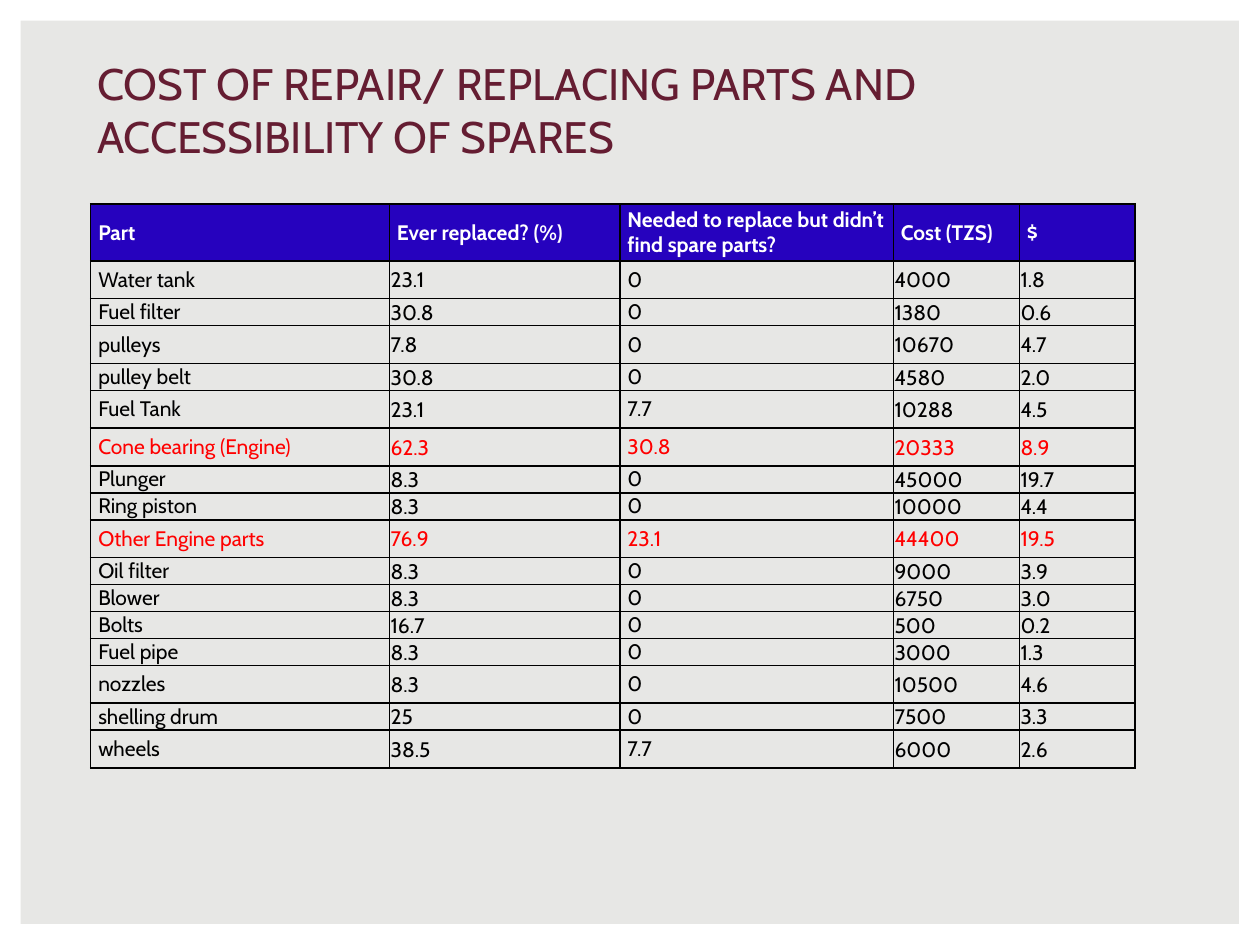
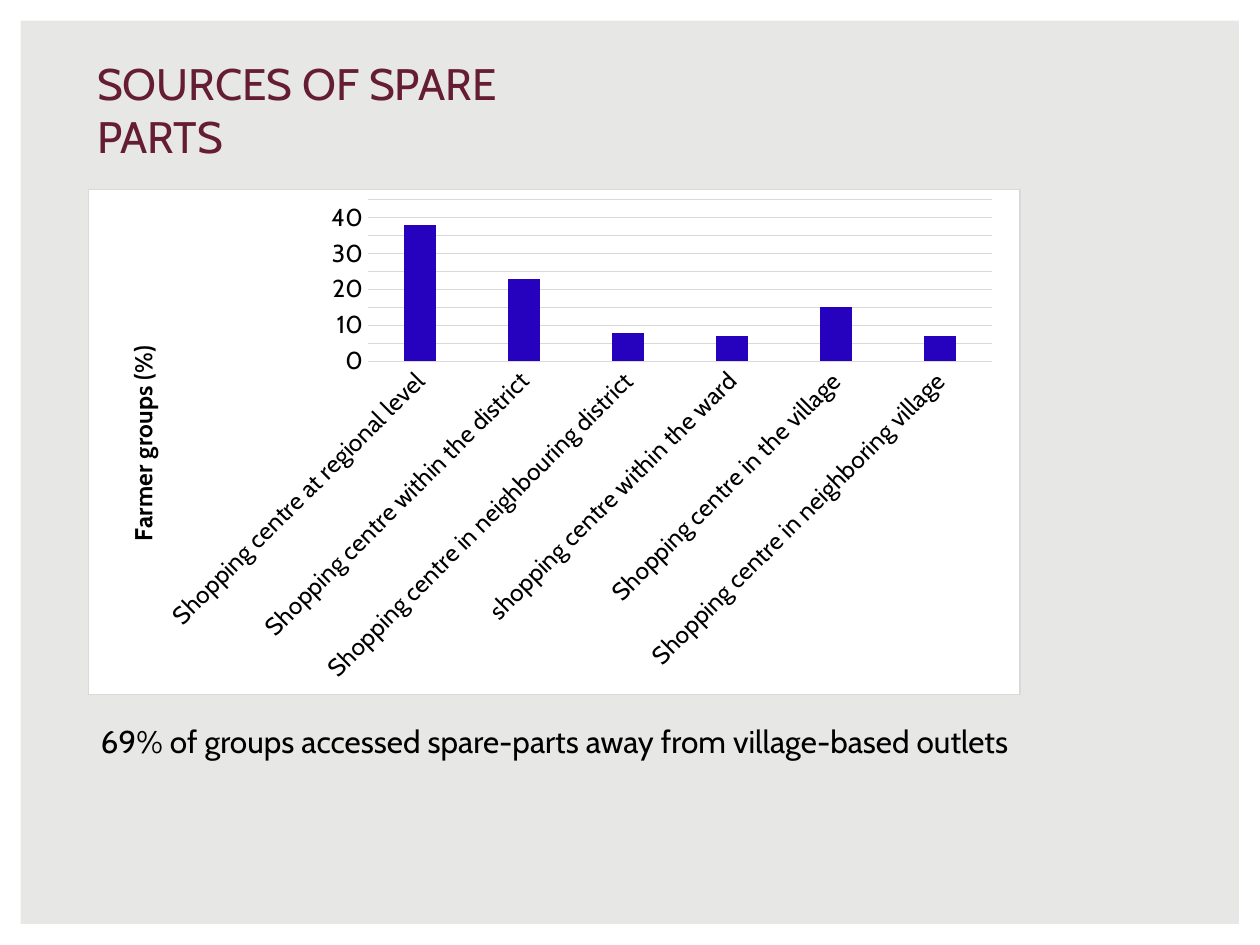
from lxml import etree
from pptx import Presentation, util as u
from pptx.chart.data import CategoryChartData
from pptx.dml.color import RGBColor
from pptx.enum import chart as ch, shapes, text
from pptx.oxml import parse_xml
from pptx.oxml.ns import nsdecls, qn

FONT = "Cabin"
GREY, WHITE, BLACK = "E7E7E5", "FFFFFF", "000000"
PLUM, BLUE, RED, RULE = "651D32", "2602BE", "FF0000", "D9D9D9"
TITLE_ONLY = 5

HEADINGS = ["Part", "Ever replaced? (%)",
            "Needed to replace but didn’t find spare parts?", "Cost (TZS)", "$"]
PARTS = [
    ("Water tank", "23.1", "0", "4000", "1.8"),
    ("Fuel filter", "30.8", "0", "1380", "0.6"),
    ("pulleys", "7.8", "0", "10670", "4.7"),
    ("pulley belt", "30.8", "0", "4580", "2.0"),
    ("Fuel Tank", "23.1", "7.7", "10288", "4.5"),
    ("Cone bearing (Engine)", "62.3", "30.8", "20333", "8.9"),
    ("Plunger", "8.3", "0", "45000", "19.7"),
    ("Ring piston", "8.3", "0", "10000", "4.4"),
    ("Other Engine parts", "76.9", "23.1", "44400", "19.5"),
    ("Oil filter", "8.3", "0", "9000", "3.9"),
    ("Blower", "8.3", "0", "6750", "3.0"),
    ("Bolts", "16.7", "0", "500", "0.2"),
    ("Fuel pipe", "8.3", "0", "3000", "1.3"),
    ("nozzles", "8.3", "0", "10500", "4.6"),
    ("shelling drum", "25", "0", "7500", "3.3"),
    ("wheels", "38.5", "7.7", "6000", "2.6"),
]
TALL_PARTS = {"Water tank", "pulleys", "Fuel Tank", "Cone bearing (Engine)",
              "Other Engine parts", "nozzles", "wheels"}
COSTLY_PARTS = {"Cone bearing (Engine)", "Other Engine parts"}
COLUMN_WIDTHS = [2.37, 1.83, 2.17, 1, 0.92]
INDENTED_COLUMNS = {0, 2}

SOURCES = {
    "Shopping centre at regional level": 38,
    "Shopping centre within the district": 23,
    "Shopping centre in neighbouring district": 8,
    "shopping centre within the ward": 7,
    "Shopping centre in the village": 15,
    "Shopping centre in neighboring village": 7,
}


def rgb(value):
    return RGBColor.from_string(value)


def style_font(font, size, color, bold=False):
    font.name, font.size, font.bold = FONT, u.Pt(size), bold
    font.color.rgb = rgb(color)


def style_text(frame, size, color, bold=False):
    for paragraph in frame.paragraphs:
        paragraph.alignment = text.PP_ALIGN.LEFT
        for run in paragraph.runs:
            style_font(run.font, size, color, bold)


def inches(*lengths):
    return [u.Inches(length) for length in lengths]


# Shared slide: white frame and title
def new_slide(prs, heading, title_width):
    slide = prs.slides.add_slide(prs.slide_layouts[TITLE_ONLY])
    frame = slide.shapes.add_shape(shapes.MSO_SHAPE.FRAME, 0, 0,
                                   prs.slide_width, prs.slide_height)
    frame.adjustments[0] = 0.022
    frame.fill.solid()
    frame.fill.fore_color.rgb = rgb(WHITE)
    frame.line.fill.background()
    frame.shadow.inherit = False
    slide.shapes.element.insert(2, frame.element)

    title = slide.shapes.title
    title.left, title.top, title.width, title.height = inches(0.67, 0.67, title_width, 0.67)
    title.text_frame.text = heading
    title.text_frame.word_wrap = True
    title.text_frame.auto_size = text.MSO_AUTO_SIZE.NONE
    title.text_frame.vertical_anchor = text.MSO_ANCHOR.BOTTOM
    style_text(title.text_frame, 25.2, PLUM)
    return slide


# Table of parts
def add_borders(cell):
    properties = cell._tc.get_or_add_tcPr()
    for side in ("lnL", "lnR", "lnT", "lnB"):
        properties.append(parse_xml(
            f'<a:{side} {nsdecls("a")} w="{u.Pt(1)}"><a:solidFill>'
            f'<a:srgbClr val="{BLACK}"/></a:solidFill></a:{side}>'))


def fill_cell(cell, content, color, indented, header=False):
    cell.text_frame.text = content
    style_text(cell.text_frame, 12, color, bold=header)
    cell.vertical_anchor = text.MSO_ANCHOR.MIDDLE
    side, top = (0.06, 0) if indented else (0.01, 0.01)
    cell.margin_left, cell.margin_top, cell.margin_right, cell.margin_bottom = inches(
        side, top, side, 0)
    add_borders(cell)
    if header:
        cell.fill.solid()
        cell.fill.fore_color.rgb = rgb(BLUE)
    else:
        cell.fill.background()


def add_parts_table(slide):
    heights = [0.45] + [0.3 if part[0] in TALL_PARTS else 0.16 for part in PARTS]
    table = slide.shapes.add_table(
        len(heights), len(HEADINGS),
        *inches(0.72, 1.62, sum(COLUMN_WIDTHS), sum(heights))).table
    table.horz_banding = False
    for column, width in zip(table.columns, COLUMN_WIDTHS):
        column.width = u.Inches(width)
    for row, height in zip(table.rows, heights):
        row.height = u.Inches(height)

    for column, heading in enumerate(HEADINGS):
        fill_cell(table.cell(0, column), heading, WHITE, indented=True, header=True)
    for row, part in enumerate(PARTS, start=1):
        color = RED if part[0] in COSTLY_PARTS else BLACK
        for column, value in enumerate(part):
            fill_cell(table.cell(row, column), value, color, column in INDENTED_COLUMNS)


# Chart of sources
def manual_layout(**settings):
    layout = etree.Element(qn("c:layout"))
    manual = etree.SubElement(layout, qn("c:manualLayout"))
    for tag, value in settings.items():
        etree.SubElement(manual, qn(f"c:{tag}")).set("val", str(value))
    return layout


def set_layout(parent, position, **settings):
    for old in parent.findall(qn("c:layout")):
        parent.remove(old)
    parent.insert(position, manual_layout(**settings))


def rule_line(line):
    line.color.rgb = rgb(RULE)
    line.width = u.Pt(0.75)


def frame_chart(chart):
    properties = parse_xml(
        f'<c:spPr {nsdecls("c", "a")}><a:solidFill><a:srgbClr val="{WHITE}"/></a:solidFill>'
        f'<a:ln w="{u.Pt(0.75)}"><a:solidFill><a:srgbClr val="{RULE}"/></a:solidFill></a:ln>'
        '</c:spPr>')
    chart.element.find(qn("c:chart")).addnext(properties)


def add_sources_chart(slide):
    data = CategoryChartData()
    data.categories = list(SOURCES)
    data.add_series("Series 1", list(SOURCES.values()))
    chart = slide.shapes.add_chart(ch.XL_CHART_TYPE.COLUMN_CLUSTERED,
                                   *inches(0.7, 1.5, 7.4, 4.02), data).chart
    chart.has_legend = chart.has_title = False
    style_font(chart.font, 14, BLACK)
    frame_chart(chart)

    columns = chart.plots[0]
    columns.gap_width, columns.overlap = 219, -27
    columns.vary_by_categories = False
    fill = columns.series[0].format.fill
    fill.solid()
    fill.fore_color.rgb = rgb(BLUE)

    sources, share = chart.category_axis, chart.value_axis
    for axis in (sources, share):
        axis.major_tick_mark = axis.minor_tick_mark = ch.XL_TICK_MARK.NONE
        style_font(axis.tick_labels.font, 14, BLACK)
    rule_line(sources.format.line)
    sources._element.txPr.bodyPr.set("rot", str(-45 * 60000))

    share.minimum_scale, share.maximum_scale, share.major_unit = 0, 45, 5
    share.format.line.fill.background()
    rule_line(share.major_gridlines.format.line)
    share_title = share.axis_title
    share_title.text_frame.text = "Farmer groups (%)"
    style_font(share_title.text_frame.paragraphs[0].runs[0].font, 14, BLACK, bold=True)
    share_title.text_frame._txBody.bodyPr.set("rot", str(-90 * 60000))

    set_layout(share_title._element, 1, xMode="edge", yMode="edge", x=0.035, y=0.3)
    set_layout(chart.element.find(".//" + qn("c:plotArea")), 0, layoutTarget="inner",
               xMode="edge", yMode="edge", x=0.3, y=0.02, w=0.67, h=0.32)


def add_finding(slide, finding):
    box = slide.shapes.add_textbox(*inches(0.7, 5.68, 7.72, 0.4)).text_frame
    box.word_wrap = True
    box.auto_size = text.MSO_AUTO_SIZE.SHAPE_TO_FIT_TEXT
    box.text = finding
    style_text(box, 18, BLACK)


def main():
    prs = Presentation()
    prs.slide_width, prs.slide_height = inches(10, 7.5)
    background = prs.slide_master.background.fill
    background.solid()
    background.fore_color.rgb = rgb(GREY)

    costs = new_slide(prs, "COST OF REPAIR/ REPLACING PARTS AND ACCESSIBILITY OF SPARES", 8.49)
    add_parts_table(costs)

    outlets = new_slide(prs, "SOURCES OF SPARE PARTS", 4.33)
    add_sources_chart(outlets)
    add_finding(outlets, "69% of groups accessed spare-parts away from village-based outlets")

    prs.save("out.pptx")


if __name__ == "__main__":
    main()
